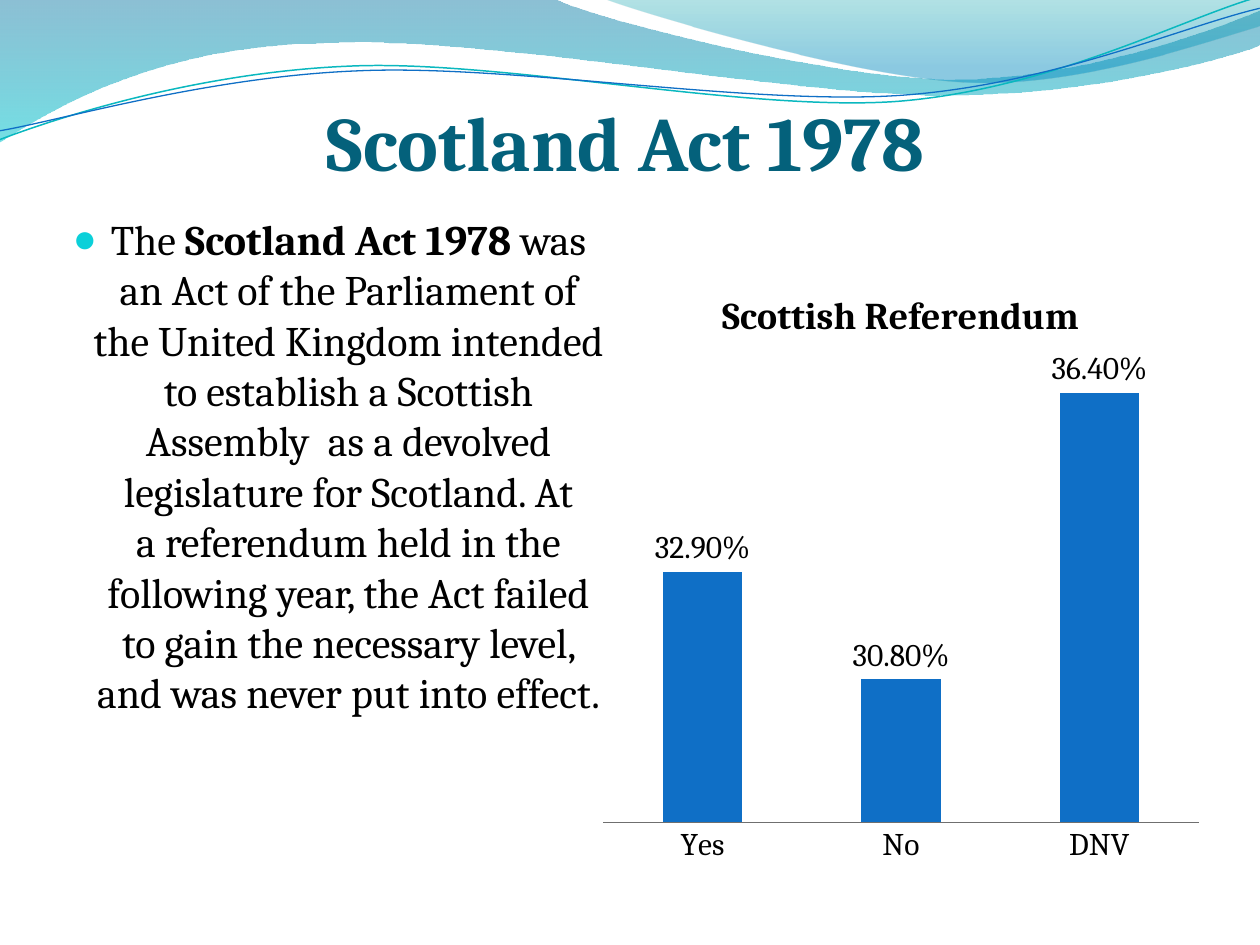
from dataclasses import dataclass

from lxml.etree import SubElement
from pptx import Presentation
from pptx.chart.data import CategoryChartData
from pptx.dml.color import RGBColor
from pptx.enum.chart import XL_CHART_TYPE, XL_LABEL_POSITION, XL_TICK_MARK
from pptx.enum.text import MSO_ANCHOR, MSO_AUTO_SIZE, PP_ALIGN
from pptx.oxml.ns import qn
from pptx.util import Pt

EMU_PER_PX = 914400 / 126
NO_BREAK_SPACE = chr(160)


@dataclass(frozen=True)
class Theme:
    font: str = "Cambria"
    ink: str = "000000"
    heading: str = "04617B"
    bullet: str = "0BD0D9"
    bar: str = "0F6FC6"
    axis: str = "6F6F6F"
    teal_line: str = "0AB8BF"
    # Gradient stops: position, colour, opacity in percent
    back_wave: tuple = ((0, "0074A1", 45), (1, "00C6CF", 55))
    front_wave: tuple = ((0, "00A1A9", 30), (0.8, "008BBF", 45))
    title_size: float = 44
    body_size: float = 24
    chart_title_size: float = 21.6
    chart_size: float = 18


THEME = Theme()

# Outlines in px: two numbers end a straight line, six describe a Bezier curve
BACK_WAVE = [
    (0, 0), (554, -1), (600, 21, 837, 79, 955, 79), (1075, 79, 1207, 33, 1260, 11),
    (1261, 45), (1239, 55, 1096, 96, 940, 95), (784, 95, 481, 35, 324, 43),
    (163, 45, 58, 105, -1, 142),
]
FRONT_WAVE = [
    (604, -1), (642, 14, 859, 78, 969, 82), (1079, 87, 1211, 40, 1260, 26), (1260, 0),
]
# The two lines are laid out level and then tilted
LINE_TILT = -2.7
TEAL_LINE = [
    (-3, 110), (58, 90, 199, 52, 350, 53), (499, 53, 745, 118, 896, 114),
    (1049, 109, 1184, 45, 1260, 27),
]
BLUE_LINE = [
    (-2, 101), (57, 94, 207, 57, 357, 58), (509, 58, 750, 112, 902, 108),
    (1052, 104, 1186, 52, 1262, 38),
]

# An underscore stands for a no-break space
ACT_TEXT = [
    ("The_", False),
    ("Scotland Act 1978", True),
    ("_was an_Act_of the_Parliament of the United Kingdom_intended to establish "
     "a_Scottish Assembly_ as a_devolved legislature_for_Scotland. At "
     "a_referendum held in the following year, the Act failed to gain the "
     "necessary level, and was never put into effect.", False),
]
VOTES = {"Yes": 0.329, "No": 0.308, "DNV": 0.364}


def px(length):
    return round(length * EMU_PER_PX)


def rgb(color):
    return RGBColor.from_string(color)


def format_font(font, size, color=THEME.ink, bold=False):
    font.name, font.size, font.bold = THEME.font, Pt(size), bold
    font.color.rgb = rgb(color)


def write(paragraph, text, **font_format):
    run = paragraph.add_run()
    run.text = text.replace("_", NO_BREAK_SPACE)
    format_font(run.font, **font_format)


def place(shape, left, top, width, height):
    shape.left, shape.top = px(left), px(top)
    shape.width, shape.height = px(width), px(height)


def add_outline(slide, segments, closed):
    corners = [(px(segment[-2]), px(segment[-1])) for segment in segments]
    builder = slide.shapes.build_freeform(*corners[0])
    builder.add_line_segments(corners[1:], close=closed)
    outline = builder.convert_to_shape()
    outline.shadow.inherit = False

    # Bend the straight segments that have control points
    straight_parts = list(outline._element.iter(qn("a:lnTo")))
    for part, segment in zip(straight_parts, segments[1:]):
        if len(segment) == 6:
            curve = SubElement(part.getparent(), qn("a:cubicBezTo"))
            for x, y in zip(segment[::2], segment[1::2]):
                SubElement(curve, qn("a:pt"), x=str(px(x) - outline.left),
                           y=str(px(y) - outline.top))
            part.getparent().replace(part, curve)
    return outline


def add_wave(slide, segments, stops):
    wave = add_outline(slide, segments, closed=True)
    wave.line.fill.background()
    wave.fill.gradient()
    wave.fill.gradient_angle = 270
    for stop, (position, color, _) in zip(wave.fill.gradient_stops, stops):
        stop.position = position
        stop.color.rgb = rgb(color)
    for color_xml, (_, _, opacity) in zip(wave._element.iter(qn("a:srgbClr")), stops):
        SubElement(color_xml, qn("a:alpha"), val=str(opacity * 1000))


def add_wave_line(slide, segments, color, width):
    wave_line = add_outline(slide, segments, closed=False)
    wave_line.rotation = LINE_TILT
    wave_line.fill.background()
    wave_line.line.color.rgb = rgb(color)
    wave_line.line.width = Pt(width)


def set_bullet(paragraph, indent):
    properties = paragraph._p.get_or_add_pPr()
    properties.set("marL", str(px(indent)))
    properties.set("indent", str(-px(indent)))
    bullet_color = SubElement(properties, qn("a:buClr"))
    SubElement(bullet_color, qn("a:srgbClr"), val=THEME.bullet)
    SubElement(properties, qn("a:buSzPct"), val="95000")
    SubElement(properties, qn("a:buFont"), typeface="Arial")
    SubElement(properties, qn("a:buChar"), char="●")


def fill_title(title):
    place(title, 59, 29, 1134, 158)
    frame = title.text_frame
    frame.auto_size = MSO_AUTO_SIZE.NONE
    frame.vertical_anchor = MSO_ANCHOR.BOTTOM
    frame.margin_left = frame.margin_right = frame.margin_bottom = 0
    heading = frame.paragraphs[0]
    heading.alignment = PP_ALIGN.CENTER
    write(heading, "Scotland Act 1978", size=THEME.title_size,
          color=THEME.heading, bold=True)


def fill_body(body):
    place(body, 39, 207, 581, 611)
    body.text_frame.auto_size = MSO_AUTO_SIZE.NONE
    summary = body.text_frame.paragraphs[0]
    summary.alignment = PP_ALIGN.CENTER
    set_bullet(summary, indent=38)
    for text, bold in ACT_TEXT:
        write(summary, text, size=THEME.body_size, bold=bold)


def add_referendum_chart(slide):
    results = CategoryChartData(number_format="0.00%")
    results.categories = list(VOTES)
    results.add_series("Scottish Referendum", list(VOTES.values()))
    chart = slide.shapes.add_chart(XL_CHART_TYPE.COLUMN_CLUSTERED, px(591), px(265),
                                   px(620), px(611), results).chart
    format_font(chart.font, THEME.chart_size)
    chart.has_legend = False
    write(chart.chart_title.text_frame.paragraphs[0], "Scottish Referendum",
          size=THEME.chart_title_size, bold=True)

    # Axes
    chart.value_axis.visible = False
    chart.value_axis.has_major_gridlines = False
    chart.value_axis.minimum_scale = 0.28
    chart.value_axis.maximum_scale = 0.37
    chart.category_axis.major_tick_mark = XL_TICK_MARK.NONE
    chart.category_axis.format.line.color.rgb = rgb(THEME.axis)
    chart.category_axis.format.line.width = Pt(0.5)

    # Columns and their labels
    columns = chart.plots[0]
    columns.vary_by_categories = False
    columns.gap_width, columns.overlap = 150, -25
    columns.series[0].format.fill.solid()
    columns.series[0].format.fill.fore_color.rgb = rgb(THEME.bar)
    labels = columns.series[0].data_labels
    labels.show_value = True
    labels.number_format, labels.number_format_is_linked = "0.00%", False
    labels.position = XL_LABEL_POSITION.OUTSIDE_END
    format_font(labels.font, THEME.chart_size)


def main():
    deck = Presentation()
    deck.slide_width, deck.slide_height = px(1260), px(945)
    slide = deck.slides.add_slide(deck.slide_layouts[1])
    title, body = slide.placeholders

    # Wave decoration
    add_wave(slide, BACK_WAVE, THEME.back_wave)
    add_wave(slide, FRONT_WAVE, THEME.front_wave)
    add_wave_line(slide, TEAL_LINE, THEME.teal_line, 0.85)
    add_wave_line(slide, BLUE_LINE, THEME.bar, 0.75)

    # Text, brought in front of the waves
    fill_title(title)
    fill_body(body)
    for placeholder in (title, body):
        slide.shapes._spTree.append(placeholder._element)

    add_referendum_chart(slide)
    deck.save("out.pptx")


if __name__ == "__main__":
    main()
